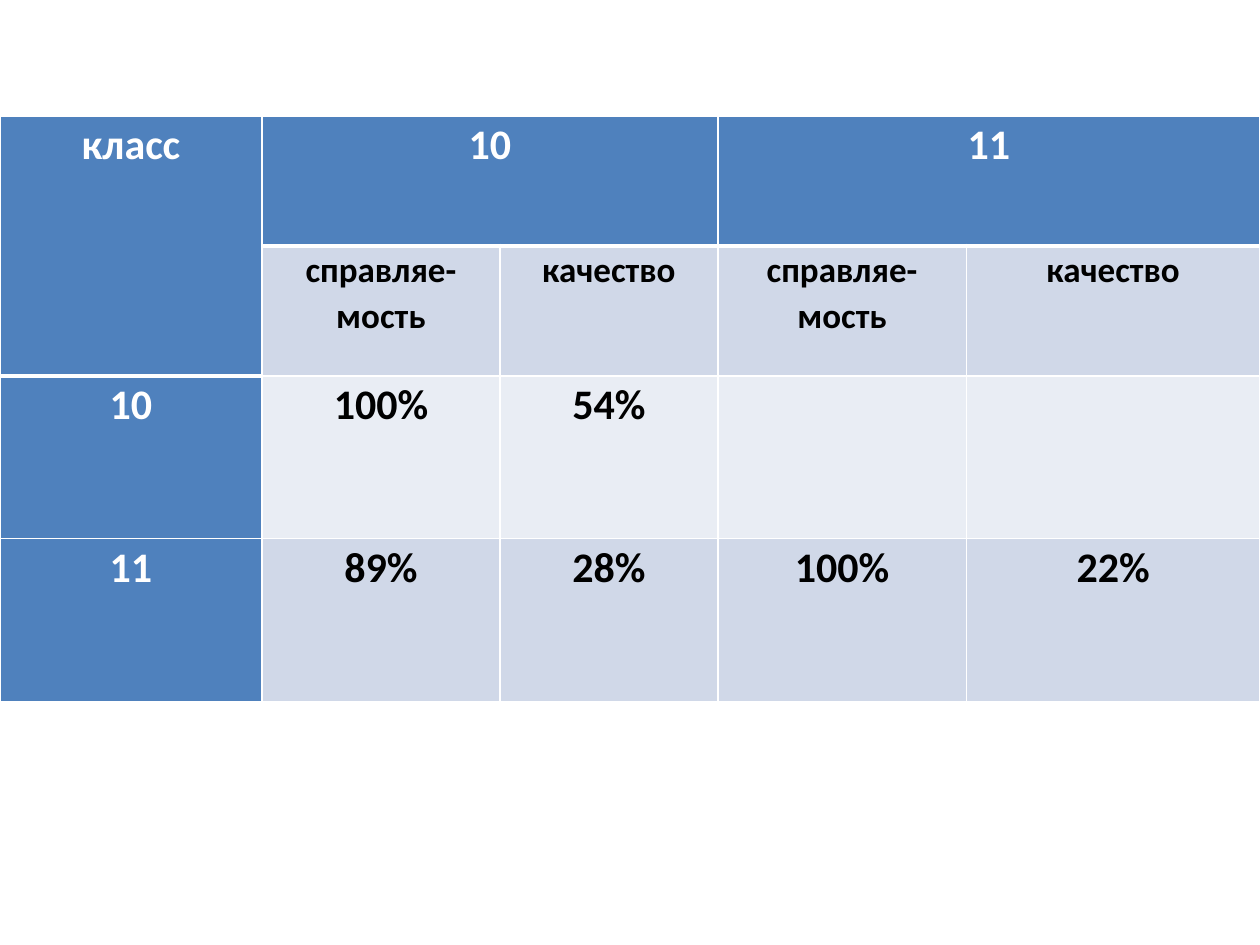
from lxml import etree
from pptx import Presentation
from pptx import util as u
from pptx.dml.color import RGBColor
from pptx.enum import text
from pptx.oxml import ns

BLUE = RGBColor(0x4F, 0x81, 0xBD)
BAND = RGBColor(0xD0, 0xD8, 0xE8)
PALE = RGBColor(0xE9, 0xED, 0xF4)
WHITE = RGBColor(0xFF, 0xFF, 0xFF)
BLACK = RGBColor(0x00, 0x00, 0x00)

COLS = [5.28, 4.8, 4.39, 5.01, 5.92]
ROWS = [2.62, 2.62, 3.28, 3.28]
MERGES = [((0, 0), (1, 0)), ((0, 1), (0, 2)), ((0, 3), (0, 4))]
MEASURES = ["справляе-\nмость", "качество"]
DATA = [
    ["класс", "10", "", "11", ""],
    [""] + MEASURES * 2,
    ["10", "100%", "54%", "", ""],
    ["11", "89%", "28%", "100%", "22%"],
]


class Deck:
    font = {"name": "Calibri", "bold": True}
    margins = {"margin_left": u.Cm(0.19), "margin_right": u.Cm(0.19),
               "margin_top": 0, "margin_bottom": 0}
    para = {"alignment": text.PP_ALIGN.CENTER, "line_spacing": 1.07}

    def __init__(self, prs):
        self.s = prs.slides.add_slide(prs.slide_layouts[6])

    def apply(self, obj, values):
        for key, value in values.items():
            setattr(obj, key, value)

    def borders(self, cell, top, bottom):
        tc_pr = cell._tc.get_or_add_tcPr()
        for side, width in zip("LRTB", (1, 1, top, bottom)):
            ln = etree.SubElement(tc_pr, ns.qn("a:ln" + side), w=str(u.Pt(width)))
            fill = etree.SubElement(ln, ns.qn("a:solidFill"))
            etree.SubElement(fill, ns.qn("a:srgbClr"), val=str(WHITE))

    def cell(self, cell, words, fill, color, size, top, bottom):
        self.borders(cell, top, bottom)
        cell.fill.solid()
        cell.fill.fore_color.rgb = fill
        self.apply(cell, self.margins)
        tf = cell.text_frame
        for i, line in enumerate(words.split("\n") if words else []):
            p = tf.add_paragraph() if i else tf.paragraphs[0]
            self.apply(p, self.para)
            r = p.add_run()
            r.text = line
            self.apply(r.font, {**self.font, "size": u.Pt(size)})
            r.font.color.rgb = color

    def table(self, left, top, cols, rows, data, merges):
        tbl = self.s.shapes.add_table(len(rows), len(cols), u.Cm(left), u.Cm(top),
                                      u.Cm(sum(cols)), u.Cm(sum(rows))).table
        tbl.first_col = True
        for col, width in zip(tbl.columns, cols):
            col.width = u.Cm(width)
        for row, height in zip(tbl.rows, rows):
            row.height = u.Cm(height)
        for first, last in merges:
            tbl.cell(*first).merge(tbl.cell(*last))
        for i, row in enumerate(data):
            for j, words in enumerate(row):
                header = i == 0 or j == 0
                fill = BLUE if header else BAND if i % 2 else PALE
                heading_end = 1 if j == 0 else 0
                bottom = 3 if i <= heading_end else 1
                above = 3 if i == heading_end + 1 else 1
                self.cell(tbl.cell(i, j), words, fill, WHITE if header else BLACK,
                          20 if i == 1 else 24, above, bottom)


def main():
    prs = Presentation()
    prs.slide_width, prs.slide_height = u.Cm(25.4), u.Cm(19.05)
    Deck(prs).table(0, 2.34, COLS, ROWS, DATA, MERGES)
    prs.save("out.pptx")


if __name__ == "__main__":
    main()
